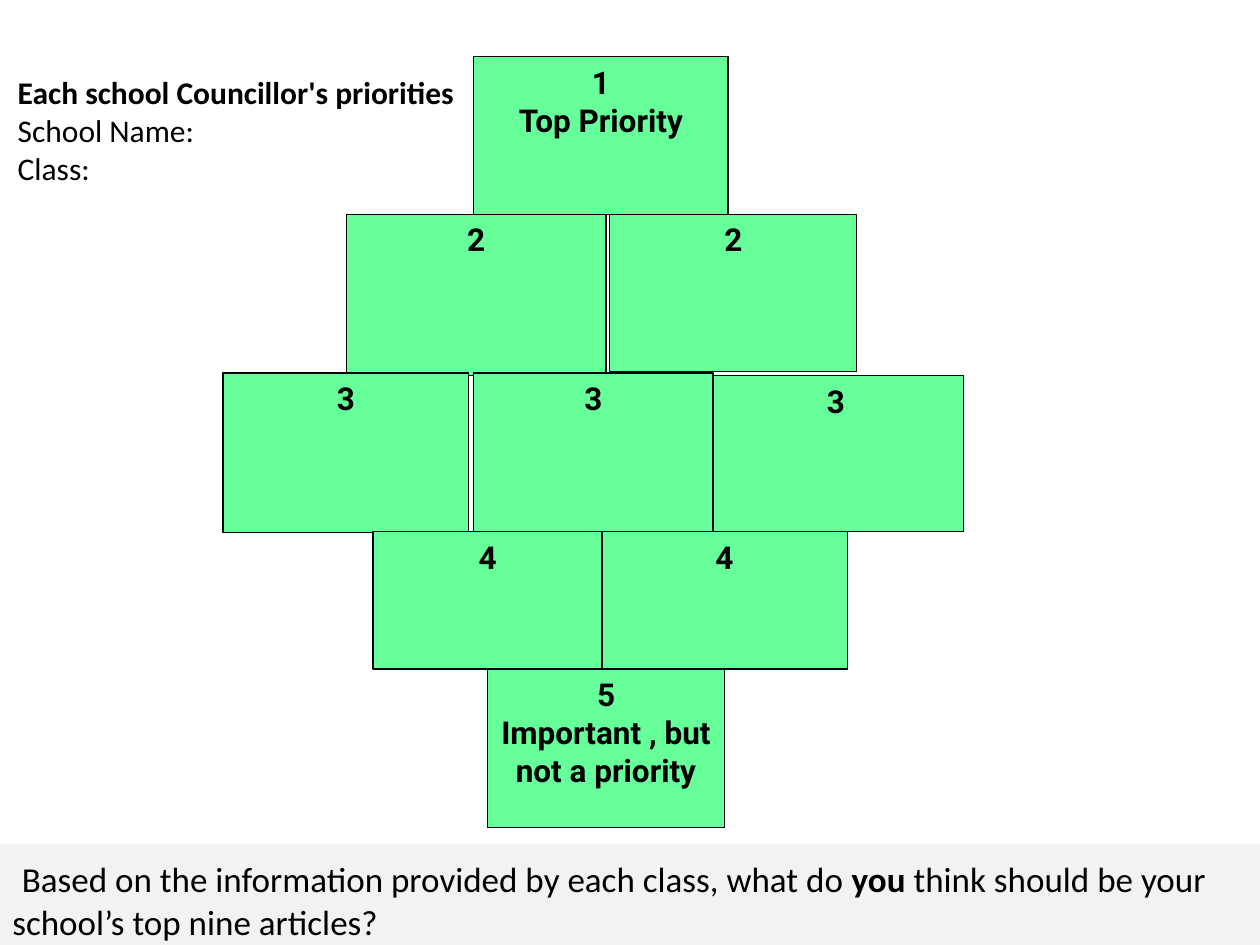
from dataclasses import dataclass

from pptx import Presentation
from pptx.dml.color import RGBColor
from pptx.enum.shapes import MSO_SHAPE as Shape
from pptx.enum.text import MSO_ANCHOR as Anchor, MSO_AUTO_SIZE as AutoSize, PP_ALIGN as Align
from pptx.util import Pt


@dataclass(frozen=True)
class Theme:
    card: RGBColor = RGBColor(0x66, 0xFF, 0x99)
    band: RGBColor = RGBColor(0xF2, 0xF2, 0xF2)
    ink: RGBColor = RGBColor(0, 0, 0)
    card_font: str = "Roboto"
    body_font: str = "Calibri"
    label_size: int = 18
    question_size: int = 20
    indent_size: int = 24
    outline: float = 0.75


THEME = Theme()

# Left, top, width, height and lines of each card, from back to front.
CARDS = [
    (270.7, 32.4, 145.4, 90, ["1", "Top Priority"]),
    (198, 122.4, 148.3, 92.2, ["2"]),
    (404.6, 214.6, 146.2, 89.3, ["3"]),
    (127.4, 213.1, 140.4, 91.4, ["3"]),
    (270.7, 213.1, 136.8, 90.7, ["3"]),
    (348.5, 122.4, 141.1, 90, ["2"]),
    (278.6, 382.3, 135.4, 90.7, ["5", "Important , but not a priority"]),
    (343.4, 303.8, 141.1, 78.5, ["4"]),
    (213.1, 303.8, 131, 78.5, ["4"]),
]


def add_span(para, text, *, size=THEME.label_size, font=THEME.body_font, bold=False):
    span = para.add_run()
    span.text = text
    span.font.size = Pt(size)
    span.font.name = font
    span.font.bold = bold
    span.font.color.rgb = THEME.ink


def add_paragraphs(box, count, align):
    """Prepare the box for top-anchored text and return its paragraphs."""
    frame = box.text_frame
    frame.word_wrap = True
    frame.auto_size = AutoSize.NONE
    frame.vertical_anchor = Anchor.TOP
    paras = [frame.paragraphs[0]] + [frame.add_paragraph() for _ in range(count - 1)]
    for para in paras:
        para.alignment = align
    return paras


def add_panel(page, left, top, width, height, color):
    panel = page.shapes.add_shape(Shape.RECTANGLE, Pt(left), Pt(top), Pt(width), Pt(height))
    panel.shadow.inherit = False
    panel.fill.solid()
    panel.fill.fore_color.rgb = color
    panel.line.fill.background()
    return panel


def add_card(page, left, top, width, height, lines):
    card = add_panel(page, left, top, width, height, THEME.card)
    card.line.color.rgb = THEME.ink
    card.line.width = Pt(THEME.outline)
    for para, line in zip(add_paragraphs(card, len(lines), Align.CENTER), lines):
        add_span(para, line, font=THEME.card_font, bold=True)


def add_question(page):
    band = add_panel(page, 0, 482.4, 720, 60.5, THEME.band)
    para = add_paragraphs(band, 1, Align.LEFT)[0]
    add_span(para, " ", size=THEME.indent_size)
    for text, bold in [
        ("Based on the information provided by each class, what do ", False),
        ("you", True),
        (" think should be your school’s top nine articles?", False),
    ]:
        add_span(para, text, size=THEME.question_size, bold=bold)


def set_heading(page):
    title = page.shapes.title
    title.left, title.top, title.width, title.height = Pt(2.9), Pt(38.2), Pt(360), Pt(72.7)
    lines = ["Each school Councillor's priorities", "School Name:", "Class:"]
    for index, para in enumerate(add_paragraphs(title, len(lines), Align.LEFT)):
        add_span(para, lines[index], bold=index == 0)


def main():
    deck = Presentation()
    deck.slide_width, deck.slide_height = Pt(720), Pt(540)
    page = deck.slides.add_slide(deck.slide_layouts.get_by_name("Title Only"))
    set_heading(page)
    for card in CARDS:
        add_card(page, *card)
    add_question(page)
    deck.save("out.pptx")


if __name__ == "__main__":
    main()
